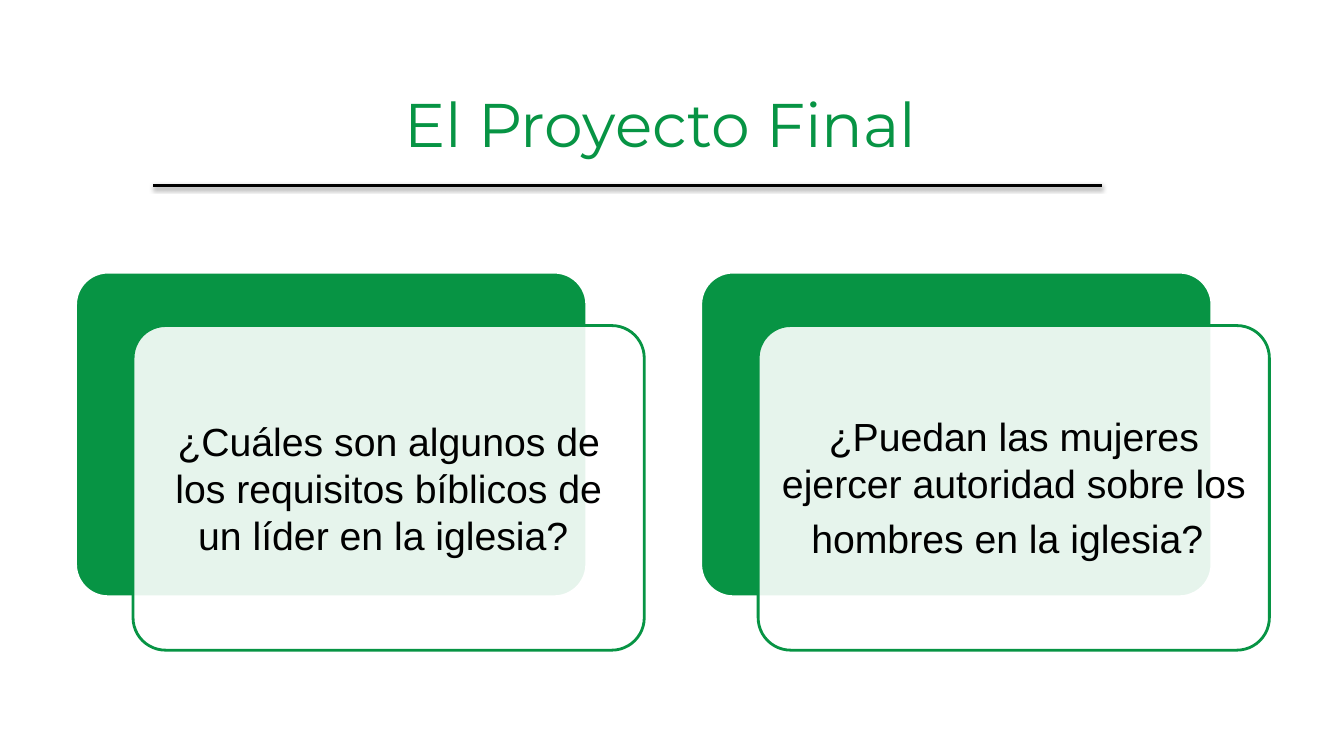
from lxml import etree
from pptx import Presentation, util as u
from pptx.dml.color import RGBColor
from pptx.enum import shapes, text
from pptx.oxml import ns, parse_xml

WIDTH, HEIGHT = 13.33, 7.5
GREEN, BLACK, WHITE = "079444", "000000", "FFFFFF"
CARD_WIDTH, CARD_HEIGHT = 5.07, 3.22
CARD_LEFT, CARD_TOP, CARD_STEP = 0.75, 2.7, 6.2
OFFSET_X, OFFSET_Y = 0.57, 0.53
QUESTIONS = [
    [("¿Cuáles son algunos de los requisitos bíblicos de un líder en la iglesia? ", 28)],
    [("¿Puedan las mujeres ejercer autoridad sobre los hombres en la iglesia?", 28),
     (" ", 34)],
]


def color(value):
    return RGBColor.from_string(value)


def add_run(para, words, size, font, shade):
    span = para.add_run()
    span.text = words
    span.font.size = u.Pt(size)
    span.font.name = font
    span.font.color.rgb = color(shade)


def set_margins(frame, across, down):
    frame.margin_left = frame.margin_right = u.Inches(across)
    frame.margin_top = frame.margin_bottom = u.Inches(down)


def add_heading(page, left, top, width, height):
    title = page.shapes.title
    title.left, title.top = u.Inches(left), u.Inches(top)
    title.width, title.height = u.Inches(width), u.Inches(height)
    frame = title.text_frame
    frame.word_wrap = True
    frame.auto_size = text.MSO_AUTO_SIZE.NONE
    frame.vertical_anchor = text.MSO_ANCHOR.TOP
    set_margins(frame, 0.1, 0.05)
    para = frame.paragraphs[0]
    para.alignment = text.PP_ALIGN.CENTER
    add_run(para, "El Proyecto Final", 44, "Montserrat", GREEN)


def add_rule(page, left, top, width):
    """Draw the black line under the title with its soft shadow."""
    y = u.Inches(top)
    rule = page.shapes.add_connector(
        shapes.MSO_CONNECTOR.STRAIGHT, u.Inches(left), y, u.Inches(left + width), y)
    rule.line.color.rgb = color(BLACK)
    rule.line.width = u.Pt(2)
    effects = parse_xml(f"<a:effectLst {ns.nsdecls('a')}/>")
    shadow = etree.SubElement(
        effects, ns.qn("a:outerShdw"), blurRad=str(u.Pt(3.1)),
        dist=str(u.Pt(1.6)), dir="5400000", rotWithShape="0")
    shade = etree.SubElement(shadow, ns.qn("a:srgbClr"), val=BLACK)
    etree.SubElement(shade, ns.qn("a:alpha"), val="38000")
    rule._element.spPr.append(effects)


def add_panel(page, left, top, fill, line):
    panel = page.shapes.add_shape(
        shapes.MSO_SHAPE.ROUNDED_RECTANGLE, u.Inches(left), u.Inches(top),
        u.Inches(CARD_WIDTH), u.Inches(CARD_HEIGHT))
    panel.adjustments[0] = 0.1
    panel.shadow.inherit = False
    panel.fill.solid()
    panel.fill.fore_color.rgb = color(fill)
    panel.line.color.rgb = color(line)
    panel.line.width = u.Pt(2)
    return panel


def add_card(page, left, top, question):
    """Place a green panel and, shifted over it, a translucent one with the question."""
    add_panel(page, left, top, GREEN, WHITE)
    front = add_panel(page, left + OFFSET_X, top + OFFSET_Y, WHITE, GREEN)
    shade = front.fill._xPr.find(f"{ns.qn('a:solidFill')}/{ns.qn('a:srgbClr')}")
    etree.SubElement(shade, ns.qn("a:alpha"), val="90000")
    frame = front.text_frame
    frame.word_wrap = True
    frame.vertical_anchor = text.MSO_ANCHOR.MIDDLE
    set_margins(frame, 0.12, 0.12)
    para = frame.paragraphs[0]
    para.alignment = text.PP_ALIGN.CENTER
    for words, size in question:
        add_run(para, words, size, "Arial", BLACK)


def main():
    deck = Presentation()
    deck.slide_width, deck.slide_height = u.Inches(WIDTH), u.Inches(HEIGHT)
    page = deck.slides.add_slide(deck.slide_layouts[5])
    add_heading(page, 0.75, 0.8, 11.6, 2.54)
    add_rule(page, 1.52, 1.84, 9.41)
    for column, question in enumerate(QUESTIONS):
        add_card(page, CARD_LEFT + column * CARD_STEP, CARD_TOP, question)
    deck.save("out.pptx")


if __name__ == "__main__":
    main()
